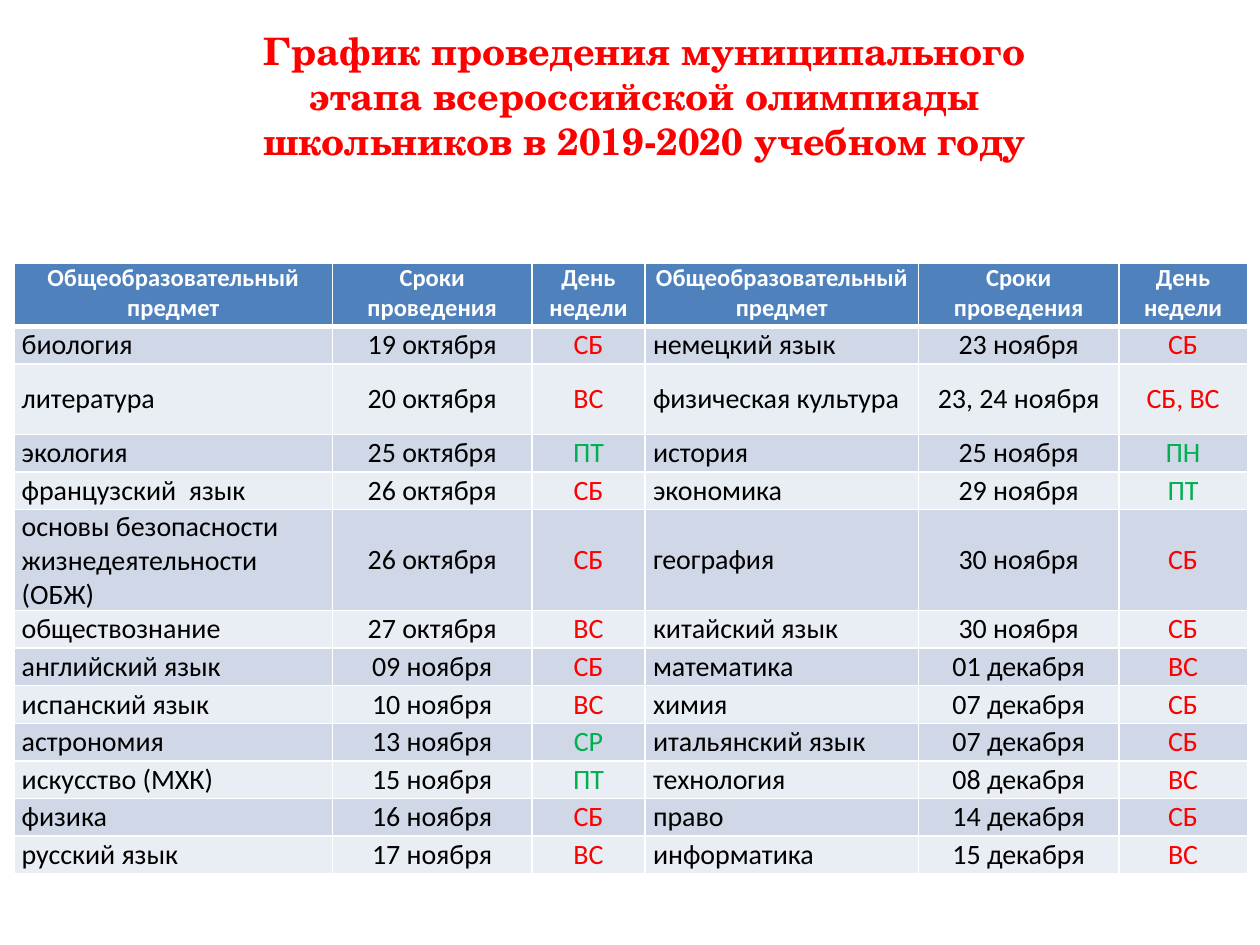
import pptx
import pptx.dml.color
import pptx.enum.text
import pptx.oxml.ns
import pptx.util
from lxml import etree

Pt = pptx.util.Pt
RGBColor = pptx.dml.color.RGBColor
ALIGN = pptx.enum.text.PP_ALIGN
ANCHOR = pptx.enum.text.MSO_ANCHOR

WHITE = RGBColor(0xFF, 0xFF, 0xFF)
BLACK = RGBColor(0x00, 0x00, 0x00)
RED = RGBColor(0xFF, 0x00, 0x00)
GREEN = RGBColor(0x00, 0xB0, 0x50)
HEADER_BLUE = RGBColor(0x4F, 0x81, 0xBD)
BAND_DARK = RGBColor(0xD0, 0xD8, 0xE8)
BAND_LIGHT = RGBColor(0xE9, 0xED, 0xF4)

TITLE = ("График проведения муниципального этапа всероссийской олимпиады "
         "школьников в 2019-2020 учебном году")
HEADINGS = ["Общеобразовательный предмет", "Сроки проведения", "День недели"]
SCHEDULE = [
    ("биология", "19 октября", "СБ", "немецкий язык", "23 ноября", "СБ"),
    ("литература", "20 октября", "ВС", "физическая культура", "23, 24 ноября", "СБ, ВС"),
    ("экология", "25 октября", "ПТ", "история", "25 ноября", "ПН"),
    ("французский  язык", "26 октября", "СБ", "экономика", "29 ноября", "ПТ"),
    ("основы безопасности жизнедеятельности (ОБЖ)", "26 октября", "СБ",
     "география", "30 ноября", "СБ"),
    ("обществознание", "27 октября", "ВС", "китайский язык", "30 ноября", "СБ"),
    ("английский язык", "09 ноября", "СБ", "математика", "01 декабря", "ВС"),
    ("испанский язык", "10 ноября", "ВС", "химия", "07 декабря", "СБ"),
    ("астрономия", "13 ноября", "СР", "итальянский язык", "07 декабря", "СБ"),
    ("искусство (МХК)", "15 ноября", "ПТ", "технология", "08 декабря", "ВС"),
    ("физика", "16 ноября", "СБ", "право", "14 декабря", "СБ"),
    ("русский язык", "17 ноября", "ВС", "информатика", "15 декабря", "ВС"),
]
COLUMN_WIDTHS = [182.2, 113.8, 64.8, 156.2, 114.5, 73.4]
ROW_HEIGHT = 21.5
TALL_ROWS = {0: 36, 2: 40.3, 5: 54}
WEEKEND = {"СБ", "ВС"}


def add_borders(cell, bottom_width):
    """Give the cell white borders; call before the fill is set."""
    properties = cell._tc.get_or_add_tcPr()
    qn = pptx.oxml.ns.qn
    for side, width in (("L", 1), ("R", 1), ("T", 1), ("B", bottom_width)):
        line = etree.SubElement(properties, qn(f"a:ln{side}"), w=str(Pt(width)))
        fill = etree.SubElement(line, qn("a:solidFill"))
        etree.SubElement(fill, qn("a:srgbClr"), val=str(WHITE))


class ScheduleSlide:
    """Holds the fonts and the current slide."""
    title_font = "TeX Gyre Schola"
    table_font = "Calibri"

    def __init__(self, presentation):
        self.slide = presentation.slides.add_slide(presentation.slide_layouts[6])

    def set_text(self, text_frame, text, font_name, size, color, bold, alignment):
        text_frame.text = text
        paragraph = text_frame.paragraphs[0]
        paragraph.alignment = alignment
        font = paragraph.runs[0].font
        font.name, font.size, font.bold = font_name, Pt(size), bold
        font.color.rgb = color

    def add_title(self, text, left, top, width, height):
        text_frame = self.slide.shapes.add_textbox(
            Pt(left), Pt(top), Pt(width), Pt(height)).text_frame
        text_frame.word_wrap = True
        text_frame.vertical_anchor = ANCHOR.MIDDLE
        self.set_text(text_frame, text, self.title_font, 21.6, RED, True, ALIGN.CENTER)

    def style_cell(self, cell, text, row, column):
        cell.margin_left = cell.margin_right = Pt(4.5)
        cell.margin_top = cell.margin_bottom = 0
        is_header = row == 0
        add_borders(cell, 3 if is_header else 1)
        cell.fill.solid()
        if is_header:
            cell.fill.fore_color.rgb = HEADER_BLUE
            size, color = 14, WHITE
        else:
            cell.vertical_anchor = ANCHOR.MIDDLE
            cell.fill.fore_color.rgb = BAND_DARK if row % 2 else BAND_LIGHT
            size, color = 16, BLACK
            if column % 3 == 2:
                color = RED if WEEKEND.issuperset(text.split(", ")) else GREEN
        centered = is_header or column % 3
        self.set_text(cell.text_frame, text, self.table_font, size, color, is_header,
                      ALIGN.CENTER if centered else ALIGN.LEFT)

    def add_table(self, rows, left, top):
        heights = [TALL_ROWS.get(row, ROW_HEIGHT) for row in range(len(rows))]
        table = self.slide.shapes.add_table(
            len(rows), len(COLUMN_WIDTHS), Pt(left), Pt(top),
            Pt(sum(COLUMN_WIDTHS)), Pt(sum(heights))).table
        for column, width in zip(table.columns, COLUMN_WIDTHS):
            column.width = Pt(width)
        for row, height in zip(table.rows, heights):
            row.height = Pt(height)
        for row, texts in enumerate(rows):
            for column, text in enumerate(texts):
                self.style_cell(table.cell(row, column), text, row, column)


def main():
    presentation = pptx.Presentation()
    presentation.slide_width, presentation.slide_height = Pt(720), Pt(540)
    schedule = ScheduleSlide(presentation)
    schedule.add_title(TITLE, 116, 9.5, 505, 90)
    schedule.add_table([HEADINGS * 2] + SCHEDULE, 7.9, 150.5)
    presentation.save("out.pptx")


if __name__ == "__main__":
    main()
